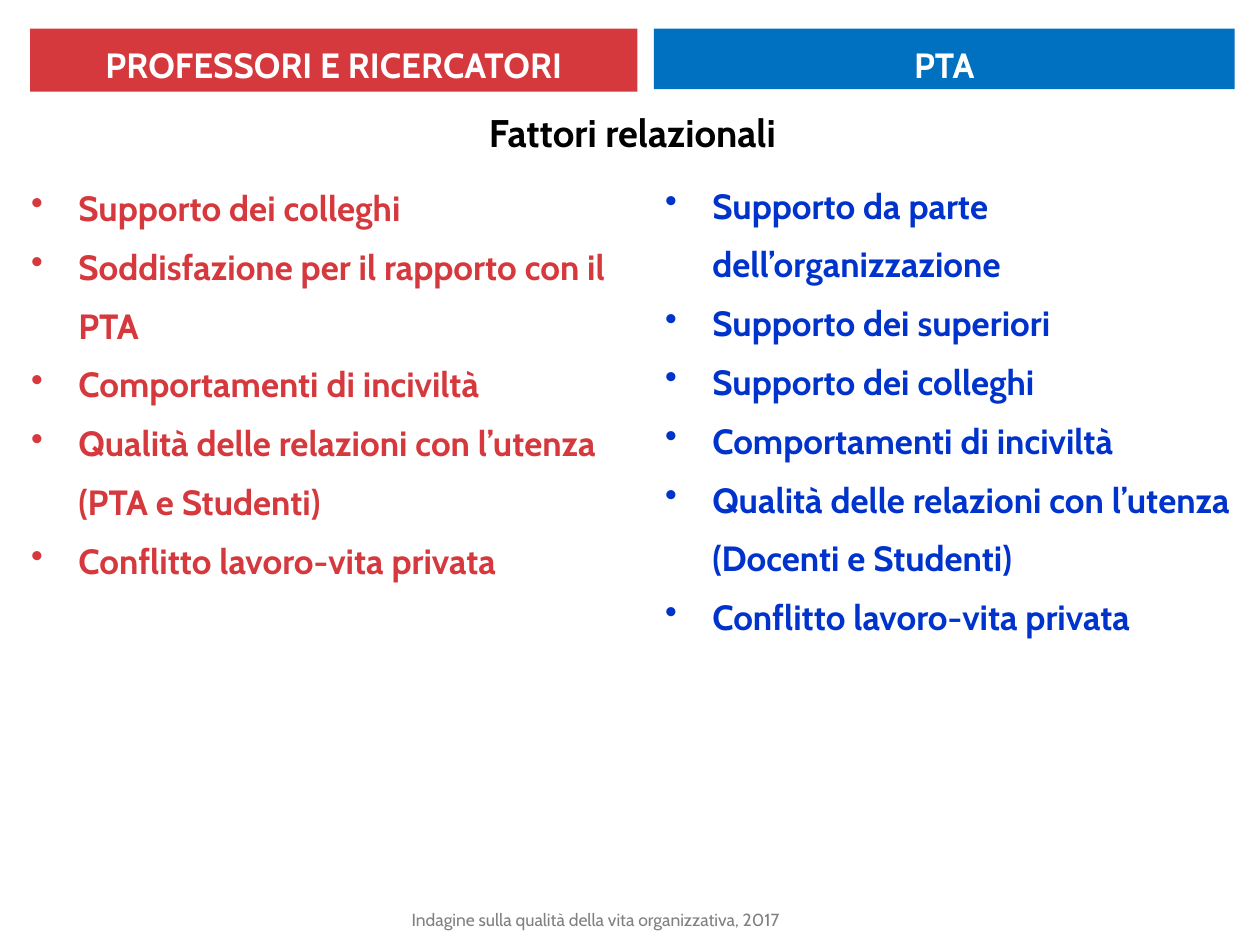
"""Build a slide that lists relational factors for two staff groups."""
from dataclasses import dataclass

import lxml.etree
import pptx
import pptx.dml.color
import pptx.enum.shapes
import pptx.enum.text
import pptx.oxml.ns
import pptx.util

Cm = pptx.util.Cm
Align = pptx.enum.text.PP_ALIGN
Anchor = pptx.enum.text.MSO_ANCHOR


@dataclass(frozen=True)
class Theme:
    face: str = "Cabin"
    red: str = "D5393D"
    blue: str = "0070C0"
    navy: str = "0033CC"
    white: str = "FFFFFF"
    black: str = "000000"
    gray: str = "808080"
    title: int = 22
    body: int = 20
    note: int = 10
    head_gap: float = 1.2
    list_gap: float = 1.4
    indent: float = 0.95


@dataclass(frozen=True)
class Box:
    left: float
    top: float
    width: float
    height: float

    def place(self) -> tuple:
        return Cm(self.left), Cm(self.top), Cm(self.width), Cm(self.height)


@dataclass(frozen=True)
class Group:
    name: str
    fill: str
    ink: str
    head: Box
    body: Box
    items: tuple[str, ...]


THEME = Theme()
GROUPS = (
    Group("PROFESSORI E RICERCATORI", THEME.red, THEME.red,
          Box(0.61, 0.58, 12.24, 1.27), Box(0.38, 3.3, 12.7, 9.83),
          ("Supporto dei colleghi",
           "Soddisfazione per il rapporto con il PTA",
           "Comportamenti di inciviltà",
           "Qualità delle relazioni con l’utenza (PTA e Studenti)",
           "Conflitto lavoro-vita privata")),
    Group("PTA", THEME.blue, THEME.navy,
          Box(13.18, 0.58, 11.71, 1.22), Box(13.16, 3.25, 12.24, 11.02),
          ("Supporto da parte dell’organizzazione",
           "Supporto dei superiori",
           "Supporto dei colleghi",
           "Comportamenti di inciviltà",
           "Qualità delle relazioni con l’utenza (Docenti e Studenti)",
           "Conflitto lavoro-vita privata")),
)


def color(code: str) -> pptx.dml.color.RGBColor:
    return pptx.dml.color.RGBColor.from_string(code)


def bullet(para) -> None:
    props = para._p.get_or_add_pPr()
    props.set("marL", str(Cm(THEME.indent)))
    props.set("indent", str(-Cm(THEME.indent)))
    mark = lxml.etree.SubElement(props, pptx.oxml.ns.qn("a:buChar"))
    mark.set("char", "•")


def write(shape, lines: tuple[str, ...], size: int, ink: str, *,
          bold: bool = True, align=Align.LEFT, anchor=Anchor.TOP,
          gap: float = 1.0, dots: bool = False) -> None:
    frame = shape.text_frame
    frame.word_wrap = True
    frame.vertical_anchor = anchor
    frame.text = "\n".join(lines)
    for para in frame.paragraphs:
        if dots:
            bullet(para)
        para.alignment = align
        para.line_spacing = gap
        font = para.font
        font.name, font.size, font.bold = THEME.face, pptx.util.Pt(size), bold
        font.color.rgb = color(ink)


def draw_group(slide, group: Group) -> None:
    head = slide.shapes.add_shape(
        pptx.enum.shapes.MSO_SHAPE.RECTANGLE, *group.head.place())
    head.shadow.inherit = False
    head.fill.solid()
    head.fill.fore_color.rgb = color(group.fill)
    head.line.fill.background()
    write(head, (group.name,), THEME.body, THEME.white,
          align=Align.CENTER, gap=THEME.head_gap)
    body = slide.shapes.add_textbox(*group.body.place())
    write(body, group.items, THEME.body, group.ink,
          gap=THEME.list_gap, dots=True)


def main() -> None:
    deck = pptx.Presentation()
    deck.slide_width, deck.slide_height = Cm(25.4), Cm(19.05)
    slide = deck.slides.add_slide(deck.slide_layouts[6])
    title = slide.shapes.add_textbox(*Box(0.61, 1.83, 24.28, 1.68).place())
    write(title, ("Fattori relazionali",), THEME.title, THEME.black,
          align=Align.CENTER, anchor=Anchor.MIDDLE)
    for group in GROUPS:
        draw_group(slide, group)
    note = slide.shapes.add_textbox(*Box(8.05, 18.03, 12.32, 1.02).place())
    write(note, ("Indagine sulla qualità della vita organizzativa, 2017",),
          THEME.note, THEME.gray, bold=False, anchor=Anchor.MIDDLE)
    deck.save("out.pptx")


if __name__ == "__main__":
    main()
